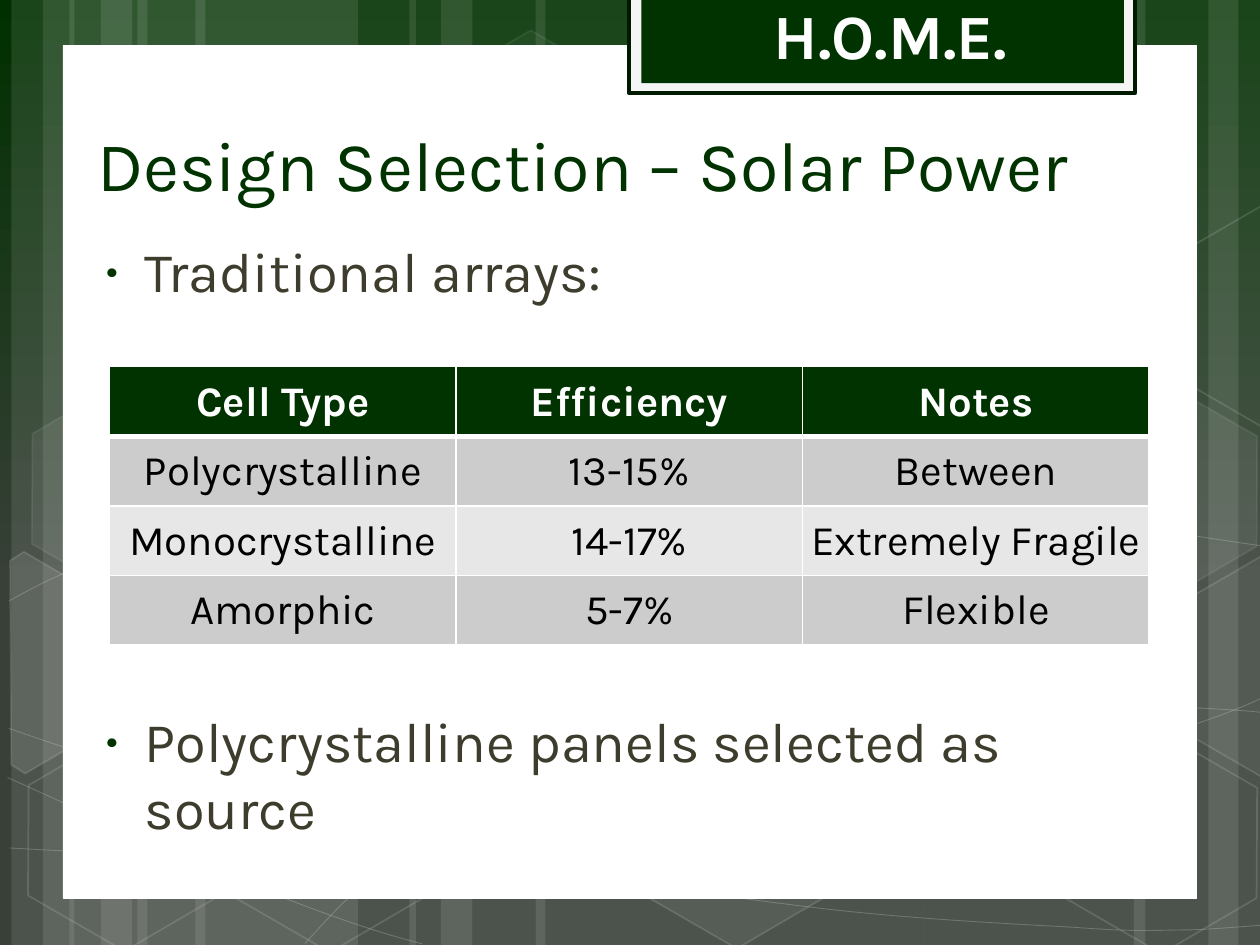
from copy import deepcopy
from dataclasses import dataclass

from lxml.etree import SubElement
from pptx import Presentation
from pptx.dml.color import RGBColor
from pptx.enum.shapes import MSO_SHAPE as Shape
from pptx.enum.text import MSO_ANCHOR as Anchor, PP_ALIGN as Align
from pptx.oxml.ns import qn
from pptx.util import Inches, Pt


@dataclass(frozen=True)
class Theme:
    font: str = "Karla"
    green: str = "003300"
    dark_green: str = "001A00"
    white: str = "FFFFFF"
    frame: str = "F5F5F5"
    body: str = "3E3D2D"
    black: str = "000000"
    bands: tuple = ("CCCCCC", "E7E7E7")
    backdrop: tuple = ((0, "003000"), (0.62, "384038"), (1, "393E39"))
    title_size: int = 40
    tag_size: int = 36
    body_size: int = 32
    table_size: int = 24


THEME = Theme()

# Backdrop strips: left, width
STRIPS = [(1.09, 1.75), (0.09, 0.5), (0.34, 0.83), (1.55, 1.75), (0.55, 0.5),
          (0.8, 0.83), (7.34, 1.75), (9.59, 0.5), (9, 0.83), (4.25, 3.09),
          (3.25, 0.5), (3.5, 0.83)]

# Backdrop waves: a start point, then two controls and an end for each Bezier piece
WAVES = [
    [(0.07, 6.73), (0.61, 6.76), (1.15, 6.79), (1.9, 6.78), (2.65, 6.77),
     (3.58, 6.75), (4.58, 6.65), (5.58, 6.55), (7, 6.36), (7.92, 6.17),
     (8.83, 5.98), (9.77, 5.68), (10.07, 5.51)],
    [(0.07, 4.77), (0.36, 4.61), (0.65, 4.46), (1.21, 4.31), (1.78, 4.16),
     (2.59, 3.94), (3.47, 3.87), (4.36, 3.8), (5.44, 3.79), (6.54, 3.87),
     (7.64, 3.95), (9.47, 4.26), (10.07, 4.34)],
    [(0.06, 6.17), (1.27, 6.72), (2.47, 7.27), (3.35, 7.49)],
    [(0.07, 5.78), (0.38, 5.89), (0.7, 6), (1.28, 6.16), (1.86, 6.31),
     (2.73, 6.56), (3.57, 6.73), (4.4, 6.9), (5.45, 7.08), (6.28, 7.18),
     (7.11, 7.29), (8, 7.33), (8.53, 7.36), (9.06, 7.4), (9.19, 7.38),
     (9.45, 7.38), (9.71, 7.37), (9.89, 7.35), (10.07, 7.34)],
    [(2.42, 7.49), (2.6, 7.29), (2.78, 7.09), (3.02, 6.91), (3.26, 6.72),
     (3.6, 6.53), (3.88, 6.39), (4.16, 6.25), (4.33, 6.19), (4.69, 6.09),
     (5.06, 5.99), (5.73, 5.85), (6.08, 5.78), (6.44, 5.71), (6.49, 5.71),
     (6.8, 5.69), (7.11, 5.66), (7.6, 5.63), (7.94, 5.62), (8.29, 5.61),
     (8.86, 5.62), (8.86, 5.62), (9.08, 5.62), (9.31, 5.62), (9.53, 5.62),
     (9.71, 5.63), (9.88, 5.64), (9.97, 5.65), (10.06, 5.66), (10.03, 5.65),
     (10.06, 5.66)],
]
# The last wave runs straight after its seventh piece
WAVES[-1][22:25] = [(9.08, 5.62), (9.31, 5.62), (9.53, 5.62)]

# Hexagons: left, top, fill opacity, line opacity (percent)
HEXAGONS = [(3.34, 0.36, 4, 8), (4.97, 5.89, 6, 12), (0.11, 5.91, 0, 12),
            (0.14, 3.12, 7, 8), (1.74, 5.92, 0, 12), (7.53, 4.53, 10, 12),
            (8.34, 5.93, 0, 12), (8.34, 3.14, 7, 8)]

# Hexagons cut by the slide edge: fill opacity, corners
CUT_HEXAGONS = [
    (10, [(0.08, 4.45), (0.19, 4.38), (0.96, 4.83), (0.95, 5.7), (0.2, 6.14), (0.09, 6.07)]),
    (4, [(9.26, 4.85), (10.02, 4.41), (10.09, 4.46), (10.09, 6.13), (10.02, 6.17), (9.26, 5.73)]),
    (0, [(9.26, 2.07), (10.02, 1.63), (10.1, 1.68), (10.09, 3.35), (10.02, 3.39), (9.26, 2.95)]),
]

CELLS = [("Cell Type", "Efficiency", "Notes"),
         ("Polycrystalline", "13-15%", "Between"),
         ("Monocrystalline", "14-17%", "Extremely Fragile"),
         ("Amorphic", "5-7%", "Flexible")]


def rgb(color):
    return RGBColor.from_string(color)


def paint(fill, color, opacity=100):
    if not opacity:
        fill.background()
        return
    fill.solid()
    fill.fore_color.rgb = rgb(color)


def set_opacity(parent, percent):
    for color in parent.findall(f"{qn('a:solidFill')}/{qn('a:srgbClr')}"):
        SubElement(color, qn("a:alpha"), val=str(percent * 1000))


def style(shape, color, opacity=100, line=None, width=0, line_opacity=100):
    shape.shadow.inherit = False
    paint(shape.fill, color, opacity)
    paint(shape.line.fill, line, 100 if line else 0)
    properties = shape.element.spPr
    if opacity < 100:
        set_opacity(properties, opacity)
    if line:
        shape.line.width = Pt(width)
        if line_opacity < 100:
            set_opacity(properties.find(qn("a:ln")), line_opacity)


def add_box(slide, left, top, width, height, kind=Shape.RECTANGLE):
    return slide.shapes.add_shape(
        kind, Inches(left), Inches(top), Inches(width), Inches(height))


def add_outline(slide, points, close):
    start, *rest = [(Inches(x), Inches(y)) for x, y in points]
    builder = slide.shapes.build_freeform(*start)
    builder.add_line_segments(rest, close=close)
    return builder.convert_to_shape()


def add_wave(slide, knots):
    wave = add_outline(slide, knots, close=False)
    outline = next(wave.element.iter(qn("a:path")))
    segments = outline.findall(qn("a:lnTo"))
    # Each three segments become one Bezier piece
    for first in range(0, len(segments), 3):
        curve = SubElement(outline, qn("a:cubicBezTo"))
        for segment in segments[first:first + 3]:
            curve.append(segment[0])
            outline.remove(segment)
    return wave


def set_font(paragraph, size, color, bold=False):
    font = paragraph.font
    font.name, font.size, font.bold = THEME.font, Pt(size), bold
    font.color.rgb = rgb(color)


def add_backdrop(slide):
    # Gradient from top to bottom
    fill = slide.background.fill
    fill.gradient()
    fill.gradient_angle = 270
    stop_list = next(slide.element.iter(qn("a:gsLst")))
    stop_list.append(deepcopy(stop_list[-1]))
    for stop, (position, color) in zip(fill.gradient_stops, THEME.backdrop):
        stop.position = position
        stop.color.rgb = rgb(color)

    for left, width in STRIPS:
        style(add_box(slide, left, 0, width, 7.5), THEME.white, 10)
    for knots in WAVES:
        style(add_wave(slide, knots), THEME.white, 0, THEME.white, 0.5, 20)
    for left, top, opacity, line_opacity in HEXAGONS:
        hexagon = add_box(slide, left, top, 1.75, 1.52, Shape.HEXAGON)
        hexagon.adjustments[0] = 0.285
        hexagon.rotation = 30
        style(hexagon, THEME.white, opacity, THEME.white, 1, line_opacity)
    for opacity, corners in CUT_HEXAGONS:
        style(add_outline(slide, corners, close=True),
              THEME.white, opacity, THEME.white, 1, 12)


def add_panel(slide):
    style(add_box(slide, 0.5, 0.36, 9, 6.77), THEME.white, 100, THEME.white, 0.5)
    style(add_box(slide, 4.99, -0.02, 4.02, 0.76), THEME.frame, 100, THEME.dark_green, 2)
    style(add_box(slide, 5.09, -0.02, 3.83, 0.68), THEME.green)


def add_text(slide, left, top, width, height, anchor):
    frame = slide.shapes.add_textbox(
        Inches(left), Inches(top), Inches(width), Inches(height)).text_frame
    frame.word_wrap = True
    frame.vertical_anchor = anchor
    return frame


def add_tag(slide):
    label = add_text(slide, 5.09, -0.04, 3.83, 0.62, Anchor.MIDDLE).paragraphs[0]
    label.text = " H.O.M.E."
    label.alignment = Align.CENTER
    set_font(label, THEME.tag_size, THEME.white, True)


def set_title(slide):
    title = slide.shapes.title
    title.left, title.top = Inches(0.67), Inches(0.92)
    title.width, title.height = Inches(8.55), Inches(0.75)
    title.text_frame.vertical_anchor = Anchor.MIDDLE
    heading = title.text_frame.paragraphs[0]
    heading.text = "Design Selection – Solar Power"
    heading.alignment = Align.LEFT
    set_font(heading, THEME.title_size, THEME.green)
    slide.shapes.element.append(title.element)  # in front of the panel


def format_bullet(paragraph, text, space_before):
    paragraph.text = text
    paragraph.space_before = Pt(space_before)
    set_font(paragraph, THEME.body_size, THEME.body)
    properties = paragraph._p.get_or_add_pPr()
    properties.set("marL", str(Inches(0.38)))
    properties.set("indent", str(Inches(-0.3)))
    color = SubElement(properties, qn("a:buClr"))
    SubElement(color, qn("a:srgbClr"), val=THEME.green)
    SubElement(properties, qn("a:buSzPct"), val="76000")
    SubElement(properties, qn("a:buFont"), typeface=THEME.font)
    SubElement(properties, qn("a:buChar"), char="•")
    properties.append(properties.find(qn("a:defRPr")))  # must follow the bullet marks


def add_bullets(slide):
    frame = add_text(slide, 0.67, 1.83, 8.75, 5.25, Anchor.TOP)
    format_bullet(frame.paragraphs[0], "Traditional arrays:", 7)
    # The gap leaves room for the table
    format_bullet(frame.add_paragraph(), "Polycrystalline panels selected as source", 230)


def add_borders(cell, top, bottom):
    for side, width in (("L", 1), ("R", 1), ("T", top), ("B", bottom)):
        border = SubElement(cell._tc.get_or_add_tcPr(), qn(f"a:ln{side}"), w=str(Pt(width)))
        fill = SubElement(border, qn("a:solidFill"))
        SubElement(fill, qn("a:srgbClr"), val=THEME.white)


def add_cell_table(slide):
    table = slide.shapes.add_table(
        len(CELLS), len(CELLS[0]), Inches(0.87), Inches(2.91),
        Inches(8.25), Inches(2.21)).table
    for row, texts in enumerate(CELLS):
        header = row == 0
        for column, text in enumerate(texts):
            cell = table.cell(row, column)
            add_borders(cell, 3 if row == 1 else 1, 3 if header else 1)
            paint(cell.fill, THEME.green if header else THEME.bands[(row - 1) % 2])
            cell.margin_left = cell.margin_right = cell.margin_top = Inches(0.01)
            cell.margin_bottom = 0
            cell.vertical_anchor = Anchor.MIDDLE
            paragraph = cell.text_frame.paragraphs[0]
            paragraph.text = text
            paragraph.alignment = Align.CENTER
            set_font(paragraph, THEME.table_size,
                     THEME.white if header else THEME.black, header)


def main():
    deck = Presentation()
    deck.slide_width, deck.slide_height = Inches(10), Inches(7.5)
    slide = deck.slides.add_slide(deck.slide_layouts[5])
    add_backdrop(slide)
    add_panel(slide)
    add_tag(slide)
    add_bullets(slide)
    set_title(slide)
    add_cell_table(slide)
    deck.save("out.pptx")


if __name__ == "__main__":
    main()
